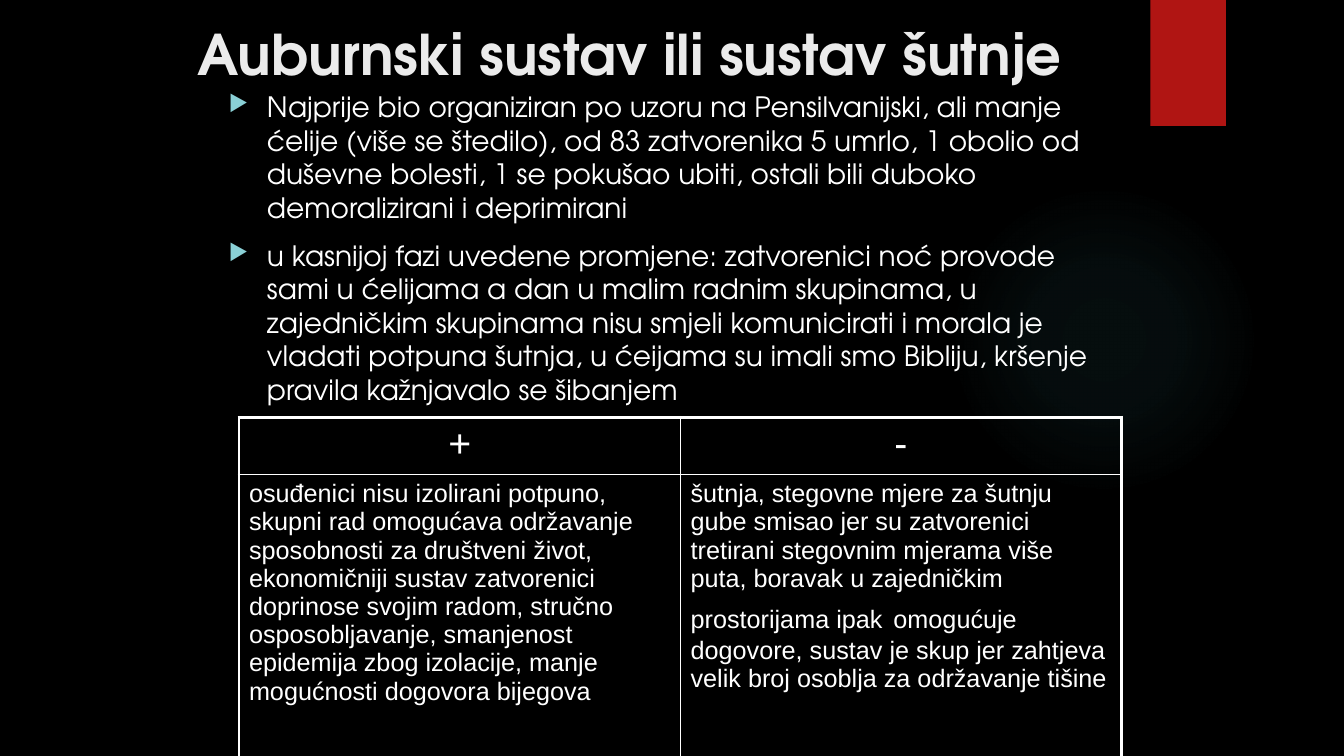
import dataclasses
import typing

import lxml.etree
import pptx
import pptx.dml.color
import pptx.enum.shapes
import pptx.enum.text
import pptx.oxml
import pptx.oxml.ns
import pptx.util

Inches = pptx.util.Inches
Pt = pptx.util.Pt
Align = pptx.enum.text.PP_ALIGN
Anchor = pptx.enum.text.MSO_ANCHOR
Shape = pptx.enum.shapes.MSO_SHAPE


@dataclasses.dataclass(frozen=True)
class Theme:
    background: str = "000000"
    glow: str = "50B9C1"
    ribbon: str = "B01513"
    title: str = "EBEBEB"
    text: str = "FFFFFF"
    bullet: str = "8AD0D6"
    heading_font: str = "TeX Gyre Adventor"
    table_font: str = "Arial"
    title_size: int = 40
    body_size: int = 20
    sign_size: int = 28
    cell_size: int = 18
    outer_line: float = 2.25
    inner_line: float = 1


class Place(typing.NamedTuple):
    left: float
    top: float
    width: float
    height: float

    def lengths(self) -> list[int]:
        return [Inches(value) for value in self]


class Span(typing.NamedTuple):
    text: str
    size: int


@dataclasses.dataclass(frozen=True)
class Cell:
    spans: list[Span]
    align: Align = Align.LEFT


THEME = Theme()
TITLE = "Auburnski sustav ili sustav šutnje"
BULLETS = [
    "Najprije bio organiziran po uzoru na Pensilvanijski, ali manje ćelije (više se štedilo), "
    "od 83 zatvorenika 5 umrlo, 1 obolio od duševne bolesti, 1 se pokušao ubiti, ostali bili "
    "duboko demoralizirani i deprimirani",
    "u kasnijoj fazi uvedene promjene: zatvorenici noć provode sami u ćelijama a dan u malim "
    "radnim skupinama, u zajedničkim skupinama nisu smjeli komunicirati i morala je vladati "
    "potpuna šutnja, u ćeijama su imali smo Bibliju, kršenje pravila kažnjavalo se šibanjem",
]
ROWS = [
    [Cell([Span(sign, THEME.sign_size)], Align.CENTER) for sign in "+-"],
    [
        Cell([Span(
            "osuđenici nisu izolirani potpuno, skupni rad omogućava održavanje sposobnosti za "
            "društveni život, ekonomičniji sustav zatvorenici doprinose svojim radom, stručno "
            "osposobljavanje, smanjenost epidemija zbog izolacije, manje mogućnosti dogovora "
            "bijegova", THEME.cell_size)]),
        Cell([
            Span("šutnja, stegovne mjere za šutnju gube smisao jer su zatvorenici tretirani "
                 "stegovnim mjerama više puta, boravak u zajedničkim prostorijama ipak",
                 THEME.cell_size),
            Span(" ", THEME.sign_size),
            Span("omogućuje dogovore, sustav je skup jer zahtjeva velik broj osoblja za "
                 "održavanje tišine", THEME.cell_size),
        ]),
    ],
]
COLUMN_WIDTHS = [4.38, 4.37]
ROW_HEIGHTS = [0.57, 2.86]


def rgb(color: str) -> pptx.dml.color.RGBColor:
    return pptx.dml.color.RGBColor.from_string(color)


def drawing_xml(markup: str) -> lxml.etree._Element:
    """Parse markup whose root element is in the drawing namespace."""
    head, tail = markup.split(">", 1)
    closing = "/" if head.endswith("/") else ""
    declared = f'{head.rstrip("/")} {pptx.oxml.ns.nsdecls("a")}{closing}>'
    return pptx.oxml.parse_xml(declared + tail)


def add_span(para, text: str, color: str, **formats) -> None:
    span = para.add_run()
    span.text = text
    for name, value in formats.items():
        setattr(span.font, name, value)
    span.font.color.rgb = rgb(color)


def add_plain_shape(page, kind: Shape, place: Place, color: str):
    shape = page.shapes.add_shape(kind, *place.lengths())
    shape.shadow.inherit = False
    shape.fill.solid()
    shape.fill.fore_color.rgb = rgb(color)
    shape.line.fill.background()
    return shape


def add_glow(page, place: Place) -> None:
    """Add a circle that fades out from its centre."""
    circle = add_plain_shape(page, Shape.OVAL, place, THEME.glow)
    stops = "".join(
        f'<a:gs pos="{position * 1000}"><a:srgbClr val="{THEME.glow}">'
        f'<a:alpha val="{alpha * 1000}"/></a:srgbClr></a:gs>'
        for position, alpha in [(0, 7), (36, 6), (69, 0), (100, 0)]
    )
    gradient = drawing_xml(
        f'<a:gradFill><a:gsLst>{stops}</a:gsLst><a:path path="circle">'
        '<a:fillToRect l="50000" t="50000" r="50000" b="50000"/></a:path></a:gradFill>'
    )
    solid = circle._element.spPr.find(pptx.oxml.ns.qn("a:solidFill"))
    solid.getparent().replace(solid, gradient)


def add_text_frame(page, place: Place, anchor: Anchor):
    frame = page.shapes.add_textbox(*place.lengths()).text_frame
    frame.word_wrap = True
    frame.vertical_anchor = anchor
    return frame


def add_bullet(para) -> None:
    properties = para._p.get_or_add_pPr()
    for name, value in {"marL": Inches(0.38), "indent": Inches(-0.38)}.items():
        properties.set(name, str(value))
    for markup in (
        f'<a:buClr><a:srgbClr val="{THEME.bullet}"/></a:buClr>',
        '<a:buSzPct val="80000"/>',
        '<a:buChar char="▶"/>',
    ):
        properties.append(drawing_xml(markup))


def add_bullets(page, place: Place) -> None:
    frame = add_text_frame(page, place, Anchor.TOP)
    for index, text in enumerate(BULLETS):
        para = frame.add_paragraph() if index else frame.paragraphs[0]
        add_bullet(para)
        if index:
            para.space_before = Pt(10)
        add_span(para, text, THEME.text, name=THEME.heading_font, size=Pt(THEME.body_size))


def set_borders(cell, outer_sides: set[str]) -> None:
    """Draw thick lines on the outer sides and thin ones on the rest."""
    properties = cell._tc.get_or_add_tcPr()
    for index, side in enumerate("LRTB"):
        width = THEME.outer_line if side in outer_sides else THEME.inner_line
        properties.insert(index, drawing_xml(
            f'<a:ln{side} w="{Pt(width)}"><a:solidFill><a:srgbClr val="{THEME.text}"/>'
            f'</a:solidFill></a:ln{side}>'
        ))


def add_comparison(page, place: Place) -> None:
    table = page.shapes.add_table(len(ROWS), len(COLUMN_WIDTHS), *place.lengths()).table
    table.first_row = table.horz_banding = False
    for column, width in zip(table.columns, COLUMN_WIDTHS):
        column.width = Inches(width)
    for row_index, (row, height) in enumerate(zip(ROWS, ROW_HEIGHTS)):
        table.rows[row_index].height = Inches(height)
        for column_index, content in enumerate(row):
            cell = table.cell(row_index, column_index)
            cell.fill.background()
            set_borders(cell, {"LR"[column_index], "TB"[row_index]})
            para = cell.text_frame.paragraphs[0]
            para.alignment = content.align
            for span in content.spans:
                add_span(para, span.text, THEME.text, name=THEME.table_font, size=Pt(span.size))


def main() -> None:
    deck = pptx.Presentation()
    deck.slide_width, deck.slide_height = Inches(13.33), Inches(7.5)
    page = deck.slides.add_slide(deck.slide_layouts[6])
    page.background.fill.solid()
    page.background.fill.fore_color.rgb = rgb(THEME.background)

    add_glow(page, Place(9.41, 1.83, 3.08, 3.08))
    add_plain_shape(page, Shape.RECTANGLE, Place(11.41, 0, 0.75, 1.25), THEME.ribbon)
    title = add_text_frame(page, Place(1.86, 0.13, 9.3, 0.79), Anchor.MIDDLE)
    add_span(title.paragraphs[0], TITLE, THEME.title, name=THEME.heading_font,
             size=Pt(THEME.title_size), bold=True)
    add_bullets(page, Place(2.17, 0.84, 8.83, 3.7))
    add_comparison(page, Place(2.37, 4.14, sum(COLUMN_WIDTHS), sum(ROW_HEIGHTS)))
    deck.save("out.pptx")


if __name__ == "__main__":
    main()
